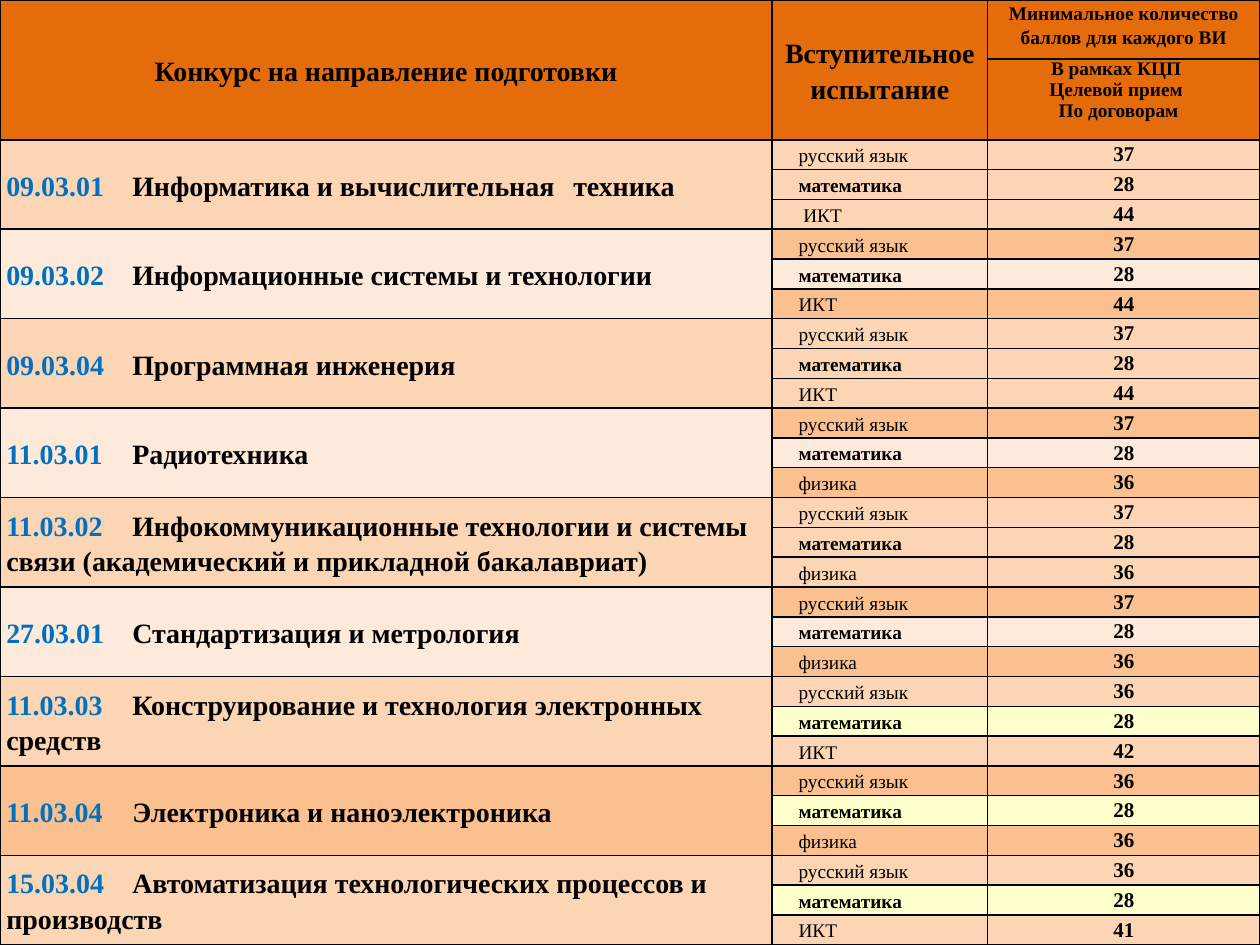
from dataclasses import dataclass

from lxml.etree import SubElement
from pptx import Presentation
from pptx.dml.color import RGBColor as RGB
from pptx.enum.text import MSO_ANCHOR as ANCHOR, PP_ALIGN as ALIGN
from pptx.oxml.ns import qn
from pptx.util import Pt


@dataclass(frozen=True)
class Theme:
    font: str = "Times New Roman"
    title: int = 16
    label: int = 11
    score: int = 12
    ink: str = "000000"
    code: str = "0070C0"
    header: str = "E46C0A"
    peach: str = "FCD5B5"
    pale: str = "FDEADA"
    orange: str = "FAC090"
    yellow: str = "FFFFCC"


T = Theme()
WIDTH, HEIGHT = 720, 540
COLUMNS = (441.2, 123.2, 155.6)
HEADER_ROWS = (33.6, 46.3)
SUBJECTS = 3

PEACH = (T.peach, T.peach, T.peach)
PALE = (T.pale, T.orange, T.pale)
PEACH_YELLOW = (T.peach, T.peach, T.yellow)
ORANGE_YELLOW = (T.orange, T.orange, T.yellow)
WIDE, NARROW = (67.5, 325), (63,)

PROGRAMS = [
    ("09.03.01", "Информатика и вычислительная\tтехника", WIDE, " ИКТ", (37, 28, 44), PEACH),
    ("09.03.02", "Информационные системы и технологии", WIDE, "ИКТ", (37, 28, 44), PALE),
    ("09.03.04", "Программная инженерия", WIDE, "ИКТ", (37, 28, 44), PEACH),
    ("11.03.01", "Радиотехника", WIDE, "физика", (37, 28, 36), PALE),
    ("11.03.02", "Инфокоммуникационные технологии и системы связи "
     "(академический и прикладной бакалавриат)", NARROW, "физика", (37, 28, 36), PEACH),
    ("27.03.01", "Стандартизация и метрология", NARROW, "физика", (37, 28, 36), PALE),
    ("11.03.03", "Конструирование и технология электронных средств", NARROW,
     "ИКТ", (36, 28, 42), PEACH_YELLOW),
    ("11.03.04", "Электроника и наноэлектроника", NARROW, "физика", (36, 28, 36), ORANGE_YELLOW),
    ("15.03.04", "Автоматизация технологических процессов и производств", NARROW,
     "ИКТ", (36, 28, 41), PEACH_YELLOW),
]


class Deck:
    def __init__(self, theme):
        self.theme = theme
        self.prs = Presentation()
        self.prs.slide_width, self.prs.slide_height = Pt(WIDTH), Pt(HEIGHT)
        self.s = self.prs.slides.add_slide(self.prs.slide_layouts[6])

    def table(self, columns, rows):
        frame = self.s.shapes.add_table(len(rows), len(columns), 0, 0, Pt(WIDTH), Pt(HEIGHT))
        table = frame.table
        table.first_row = table.horz_banding = False
        for column, width in zip(table.columns, columns):
            column.width = Pt(width)
        for row, height in zip(table.rows, rows):
            row.height = Pt(height)
        for cell in table.iter_cells():
            self.frame_cell(cell)
        return table

    def frame_cell(self, cell):
        cell.margin_left = cell.margin_right = Pt(3.6)
        cell.margin_top = cell.margin_bottom = 0
        tcPr = cell._tc.get_or_add_tcPr()
        for side in ("a:lnL", "a:lnR", "a:lnT", "a:lnB"):
            line = SubElement(tcPr, qn(side), w=str(Pt(1)))
            solid = SubElement(line, qn("a:solidFill"))
            SubElement(solid, qn("a:srgbClr"), val=self.theme.ink)

    def fill(self, cell, color):
        cell.fill.solid()
        cell.fill.fore_color.rgb = RGB.from_string(color)

    def text(self, cell, paragraphs, size, color, bold=True, align=ALIGN.LEFT,
             anchor=ANCHOR.MIDDLE, spacing=1.15, after=0, indent=0, tabs=()):
        self.fill(cell, color)
        cell.vertical_anchor = anchor
        tf = cell.text_frame
        for i, runs in enumerate(paragraphs):
            p = tf.add_paragraph() if i else tf.paragraphs[0]
            p.alignment, p.line_spacing, p.space_after = align, spacing, Pt(after)
            pPr = p._p.get_or_add_pPr()
            pPr.set("marL", str(Pt(indent)))
            pPr.set("indent", "0")
            if tabs:
                stops = SubElement(pPr, qn("a:tabLst"))
                for stop in tabs:
                    SubElement(stops, qn("a:tab"), pos=str(Pt(stop)), algn="l")
            for words, ink in runs:
                r = p.add_run()
                r.text = words
                r.font.name, r.font.size, r.font.bold = self.theme.font, Pt(size), bold
                r.font.color.rgb = RGB.from_string(ink)

    def header(self, table):
        t = self.theme
        for col, words in enumerate(("Конкурс на направление подготовки", "Вступительное испытание")):
            self.fill(table.cell(1, col), t.header)
            table.cell(0, col).merge(table.cell(1, col))
            self.text(table.cell(0, col), [[(words, t.ink)]], t.title, t.header,
                      align=ALIGN.CENTER, after=10)
        self.text(table.cell(0, 2), [[("Минимальное количество баллов для каждого ВИ", t.ink)]],
                  t.label, t.header, align=ALIGN.CENTER, anchor=ANCHOR.TOP, after=10)
        kinds = ("В рамках КЦП ", "Целевой прием ", "По договорам")
        self.text(table.cell(1, 2), [[(kind, t.ink)] for kind in kinds], t.label, t.header,
                  align=ALIGN.CENTER, anchor=ANCHOR.TOP, spacing=Pt(12))
        table.cell(1, 2).margin_right = Pt(9.6)

    def program(self, table, top, code, name, tabs, elective, scores, fills):
        t = self.theme
        main, edge, middle = fills
        table.cell(top, 0).merge(table.cell(top + SUBJECTS - 1, 0))
        self.text(table.cell(top, 0), [[(code, t.code), ("\t" + name, t.ink)]], t.title, main,
                  after=10, tabs=tabs)
        subjects = ("русский язык", "математика", elective)
        for i, (subject, score) in enumerate(zip(subjects, scores)):
            core = i == 1
            color = middle if core else edge
            self.text(table.cell(top + i, 1), [[(subject, t.ink)]], t.label, color,
                      bold=core, indent=11.5)
            self.text(table.cell(top + i, 2), [[(str(score), t.ink)]], t.score, color,
                      align=ALIGN.CENTER, anchor=ANCHOR.TOP)


def main():
    deck = Deck(T)
    count = len(PROGRAMS) * SUBJECTS
    row = round((HEIGHT - sum(HEADER_ROWS)) / count, 2)
    table = deck.table(COLUMNS, HEADER_ROWS + (row,) * count)
    deck.header(table)
    for i, program in enumerate(PROGRAMS):
        deck.program(table, len(HEADER_ROWS) + i * SUBJECTS, *program)
    deck.prs.save("out.pptx")


if __name__ == "__main__":
    main()
